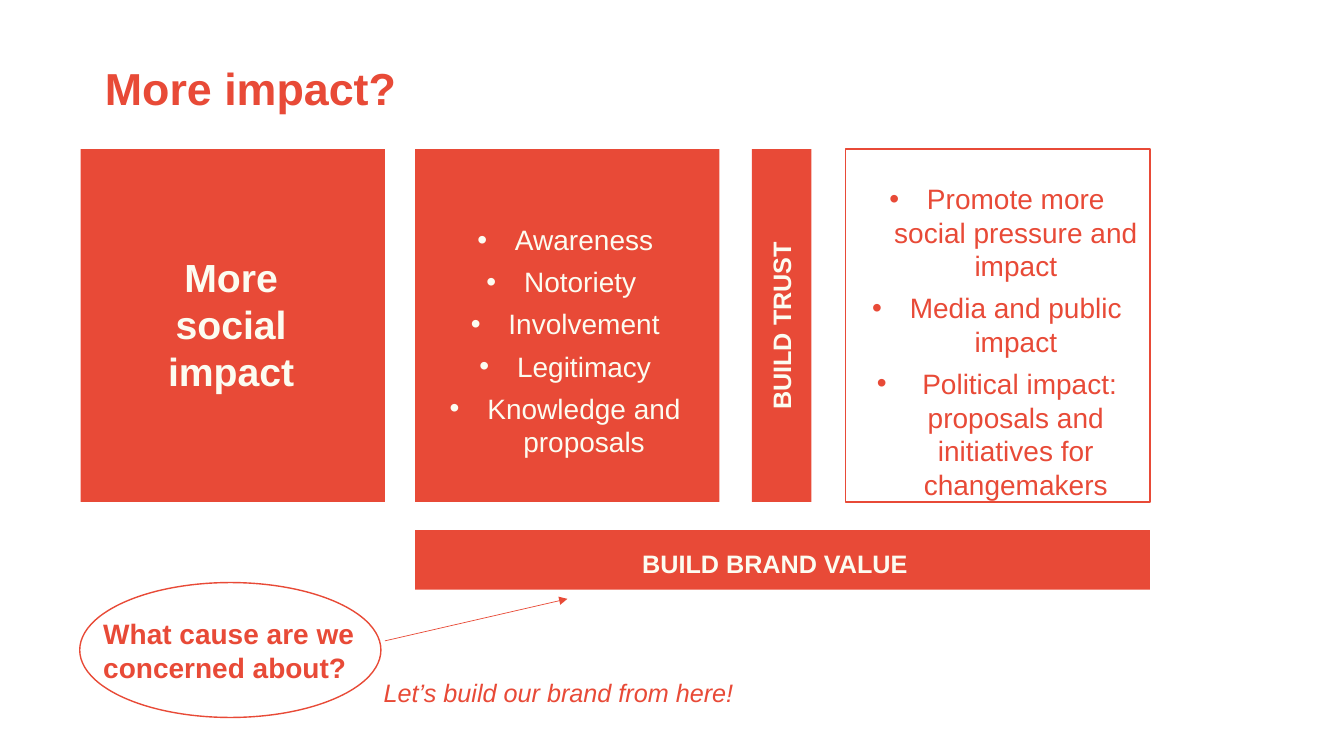
"""Build the "More impact?" slide."""
from lxml.etree import SubElement
from pptx import Presentation
from pptx.dml.color import RGBColor
from pptx.enum.shapes import MSO_CONNECTOR as Line, MSO_SHAPE as Preset
from pptx.enum.text import MSO_ANCHOR as Anchor, MSO_AUTO_SIZE as AutoSize, PP_ALIGN as Align
from pptx.oxml.ns import qn
from pptx.util import Cm, Pt

RED, CREAM = "E84A37", "FCFCF1"


def color(hex_code):
    return RGBColor.from_string(hex_code)


class Board:
    def __init__(self, slide, font="Arial"):
        self.slide = slide
        self.shapes = slide.shapes
        self.font = font

    def shape(self, preset, box, fill=None, line=None):
        outline = self.shapes.add_shape(preset, *map(Cm, box))
        outline.shadow.inherit = False
        if fill:
            outline.fill.solid()
            outline.fill.fore_color.rgb = color(fill)
        else:
            outline.fill.background()
        if line:
            outline.line.color.rgb = color(line)
            outline.line.width = Pt(1)
        else:
            outline.line.fill.background()

    def add_words(self, paragraph, wording, size, ink, bold=False, italic=False, align=Align.CENTER):
        paragraph.alignment = align
        run = paragraph.add_run()
        run.text = wording
        run.font.name = self.font
        run.font.size = Pt(size)
        run.font.bold = bold
        run.font.italic = italic
        run.font.color.rgb = color(ink)

    def text(self, wording, box, size, ink, rotation=0, **style):
        label = self.shapes.add_textbox(*map(Cm, box))
        label.rotation = rotation
        label.text_frame.word_wrap = True
        self.add_words(label.text_frame.paragraphs[0], wording, size, ink, **style)

    def place(self, holder, box):
        holder.left, holder.top, holder.width, holder.height = map(Cm, box)
        frame = holder.text_frame
        frame.word_wrap = True
        frame.auto_size = AutoSize.NONE
        frame.vertical_anchor = Anchor.TOP
        return frame

    def title(self, wording, box):
        heading = self.place(self.shapes.title, box).paragraphs[0]
        heading.line_spacing = 0.9
        self.add_words(heading, wording, 32, RED, bold=True, align=Align.LEFT)

    def bullets(self, index, items, box, ink):
        holder = self.slide.placeholders[index]
        frame = self.place(holder, box)
        self.shapes._spTree.append(holder._element)
        for number, item in enumerate(items):
            paragraph = frame.add_paragraph() if number else frame.paragraphs[0]
            paragraph.line_spacing = 1.0
            paragraph.space_before = Pt(0)
            paragraph.space_after = Pt(6)
            self.add_words(paragraph, item, 20, ink)
            props = paragraph._p.get_or_add_pPr()
            props.set("marL", str(Cm(0.95)))
            props.set("indent", str(-Cm(0.95)))
            SubElement(SubElement(props, qn("a:buClr")), qn("a:srgbClr"), val=ink)
            SubElement(props, qn("a:buFont"), typeface=self.font)
            SubElement(props, qn("a:buChar"), char="•")

    def arrow(self, start, end):
        pointer = self.shapes.add_connector(Line.STRAIGHT, *map(Cm, start + end))
        pointer.line.color.rgb = color(RED)
        pointer.line.width = Pt(0.5)
        SubElement(pointer.line._get_or_add_ln(), qn("a:tailEnd"), type="triangle")
        SubElement(pointer._element.spPr, qn("a:effectLst"))


def main():
    deck = Presentation()
    deck.slide_width, deck.slide_height = Cm(33.87), Cm(19.05)
    board = Board(deck.slides.add_slide(deck.slide_layouts[3]))
    top, panel, height, bar = 3.76, 7.67, 8.89, 1.5

    board.title("More impact?", (2.39, 1.55, 22.73, 2.39))

    board.shape(Preset.RECTANGLE, (2.03, top, panel, height), fill=RED)
    board.text("More social impact", (3.35, 6.25, 4.95, 3.84), 28, CREAM, bold=True)

    board.shape(Preset.RECTANGLE, (10.46, top, panel, height), fill=RED)
    gains = ["Awareness", "Notoriety ", "Involvement", "Legitimacy", "Knowledge and proposals"]
    board.bullets(1, gains, (11.02, 5.49, 6.45, 6.25), CREAM)

    board.shape(Preset.RECTANGLE, (21.31, top, panel, height), line=RED)
    impacts = ["Promote more social pressure and impact", "Media and public impact",
               " Political impact: proposals and initiatives for changemakers"]
    board.bullets(2, impacts, (21.29, 4.45, panel, 8.38), RED)

    board.shape(Preset.RECTANGLE, (18.95, top, bar, height), fill=RED)
    board.text("BUILD TRUST", (15.6, 7.7, 8.18, 1.02), 18, CREAM, rotation=270, bold=True)
    board.shape(Preset.RECTANGLE, (10.46, 13.36, 18.52, bar), fill=RED)
    board.text("BUILD BRAND VALUE", (11.02, 13.69, 17.02, 1.02), 18, CREAM, bold=True)

    board.shape(Preset.OVAL, (2.01, 14.68, 7.59, 3.4), line=RED)
    board.text("What cause are we concerned about? ", (1.93, 15.42, panel, 1.96), 20, RED, bold=True)
    board.arrow((9.7, 16.15), (14.3, 15.09))
    board.text("Let’s build our brand from here!", (9.42, 16.94, 14.55, 1.02), 18, RED,
               italic=True, align=Align.LEFT)

    deck.save("out.pptx")


if __name__ == "__main__":
    main()
